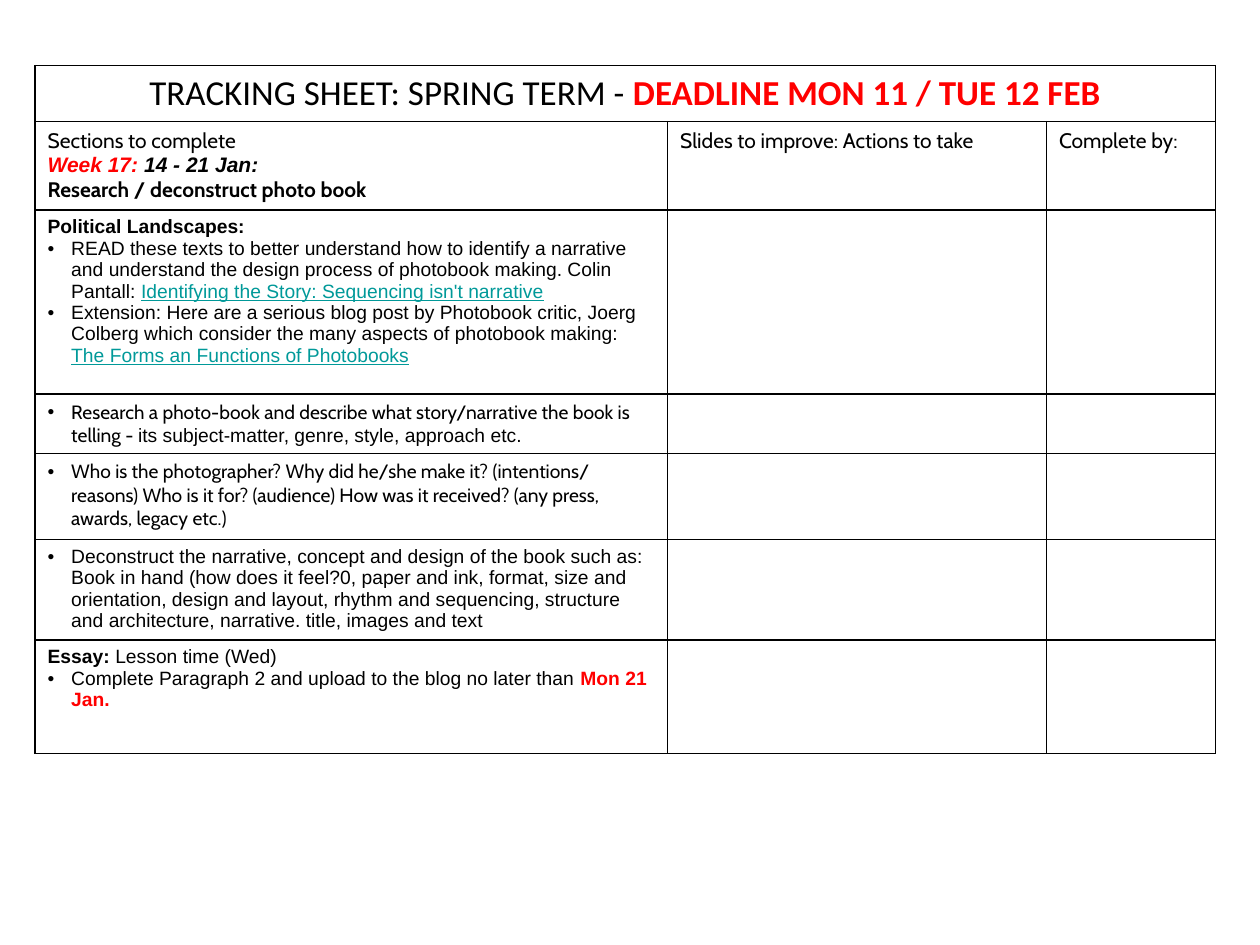
from lxml import etree
from pptx import Presentation
from pptx.dml.color import RGBColor
from pptx.enum.text import PP_ALIGN
from pptx.oxml.ns import qn
from pptx.util import Pt

CENTER = PP_ALIGN.CENTER
BLACK = RGBColor(0x00, 0x00, 0x00)
RED = RGBColor(0xFF, 0x00, 0x00)
TEAL = RGBColor(0x00, 0x99, 0x99)

COLUMN_WIDTHS = [361.5, 216.5, 96.5]
ROW_HEIGHTS = [32, 50.6, 105.1, 34, 49.1, 57.4, 64.9]
INDENT = 13.5

# Run styles
TITLE = {"font": "Calibri", "size": 20}
HEADING = {"font": "Cabin", "size": 12}
WEEK = {"size": 12, "bold": True, "italic": True}
CABIN = {"font": "Cabin"}
BOLD = {"bold": True}
RED_BOLD = {"bold": True, "color": RED}
LINK = {"color": TEAL, "underline": True}
PLAIN = {}

TITLE_LINE = [
    ("TRACKING SHEET: SPRING TERM - ", TITLE),
    ("DEADLINE MON 11 / TUE 12 FEB", TITLE | RED_BOLD),
]
SECTIONS_LINE = [
    ("Sections to complete\n", HEADING),
    ("Week 17: ", WEEK | {"color": RED}),
    ("14 - 21 Jan:\n", WEEK),
    ("Research / deconstruct photo book", HEADING | BOLD),
]
OTHER_HEADINGS = ["Slides to improve: Actions to take", "Complete by:"]

# Each task row: an optional heading line, then bulleted lines
TASKS = [
    ([("Political Landscapes:", BOLD)], [
        [("READ these texts to better understand how to identify a narrative "
          "and understand the design process of photobook making. "
          "Colin Pantall: ", PLAIN),
         ("Identifying the Story: Sequencing isn't narrative", LINK)],
        [("Extension: Here are a serious blog post by Photobook critic, Joerg "
          "Colberg which consider the many aspects of photobook making: ", PLAIN),
         ("The Forms an Functions of Photobooks", LINK)],
    ]),
    (None, [
        [("Research a photo-book and describe what story/narrative the book is "
          "telling - ", CABIN),
         ("its subject-matter, genre, style, approach etc.", PLAIN)],
    ]),
    (None, [
        [("Who is the photographer? Why did he/she make it? (intentions/ "
          "reasons) Who is it for? (audience) How was it received? (any press, "
          "awards, legacy etc.)", CABIN)],
    ]),
    (None, [
        [("Deconstruct the narrative, concept and design of the book such as: "
          "Book in hand (how does it feel?0, paper and ink, format, size and "
          "orientation, design and layout, rhythm and sequencing, structure "
          "and architecture, narrative. title, images and text", PLAIN)],
    ]),
    ([("Essay: ", BOLD), ("Lesson time (Wed)", PLAIN)], [
        [("Complete Paragraph 2 and upload to the blog no later than ", PLAIN),
         ("Mon 21 Jan.", RED_BOLD)],
    ]),
]


def write_line(paragraph, pieces):
    """Add styled runs; a newline at the end of a piece breaks the line."""
    for text, style in pieces:
        run = paragraph.add_run()
        run.text = text.rstrip("\n")
        font = run.font
        font.name = style.get("font", "Arial")
        font.size = Pt(style.get("size", 11))
        font.bold = style.get("bold", False)
        font.italic = style.get("italic", False)
        font.underline = style.get("underline", False)
        font.color.rgb = style.get("color", BLACK)
        if text.endswith("\n"):
            paragraph.add_line_break()


def add_bullet(paragraph):
    properties = paragraph._p.get_or_add_pPr()
    properties.set("marL", str(Pt(INDENT)))
    properties.set("indent", str(-Pt(INDENT)))
    etree.SubElement(properties, qn("a:buFont"), typeface="Arial")
    etree.SubElement(properties, qn("a:buChar"), char="•")


def style_cell(cell):
    """Thin black border on every side, no fill."""
    properties = cell._tc.get_or_add_tcPr()
    for side in ("a:lnL", "a:lnR", "a:lnT", "a:lnB"):
        line = etree.SubElement(properties, qn(side), w=str(Pt(1)))
        fill = etree.SubElement(line, qn("a:solidFill"))
        etree.SubElement(fill, qn("a:srgbClr"), val=str(BLACK))
    cell.fill.background()


def fill_task(cell, heading, bullets):
    frame = cell.text_frame
    lines = [(heading, False)] if heading else []
    lines += [(bullet, True) for bullet in bullets]
    for index, (pieces, bulleted) in enumerate(lines):
        paragraph = frame.add_paragraph() if index else frame.paragraphs[0]
        if bulleted:
            add_bullet(paragraph)
        write_line(paragraph, pieces)


def add_tracking_sheet(slide, left, top):
    sheet = slide.shapes.add_table(
        len(ROW_HEIGHTS), len(COLUMN_WIDTHS), Pt(left), Pt(top),
        Pt(sum(COLUMN_WIDTHS)), Pt(sum(ROW_HEIGHTS))).table
    sheet.first_row = sheet.horz_banding = False
    for column, width in zip(sheet.columns, COLUMN_WIDTHS):
        column.width = Pt(width)
    for row, height in zip(sheet.rows, ROW_HEIGHTS):
        row.height = Pt(height)
    for cell in sheet.iter_cells():
        style_cell(cell)

    # Title across all columns
    title = sheet.cell(0, 0)
    title.merge(sheet.cell(0, len(COLUMN_WIDTHS) - 1))
    title_paragraph = title.text_frame.paragraphs[0]
    title_paragraph.alignment = CENTER
    write_line(title_paragraph, TITLE_LINE)

    # Column headings
    headings = [SECTIONS_LINE] + [[(text, HEADING)] for text in OTHER_HEADINGS]
    for column, pieces in enumerate(headings):
        write_line(sheet.cell(1, column).text_frame.paragraphs[0], pieces)

    # Tasks
    for row, (heading, bullets) in enumerate(TASKS, start=2):
        fill_task(sheet.cell(row, 0), heading, bullets)


def main():
    presentation = Presentation()
    presentation.slide_width = Pt(720)
    presentation.slide_height = Pt(540)
    slide = presentation.slides.add_slide(presentation.slide_layouts[6])
    add_tracking_sheet(slide, 20, 37.5)
    presentation.save("out.pptx")


if __name__ == "__main__":
    main()
